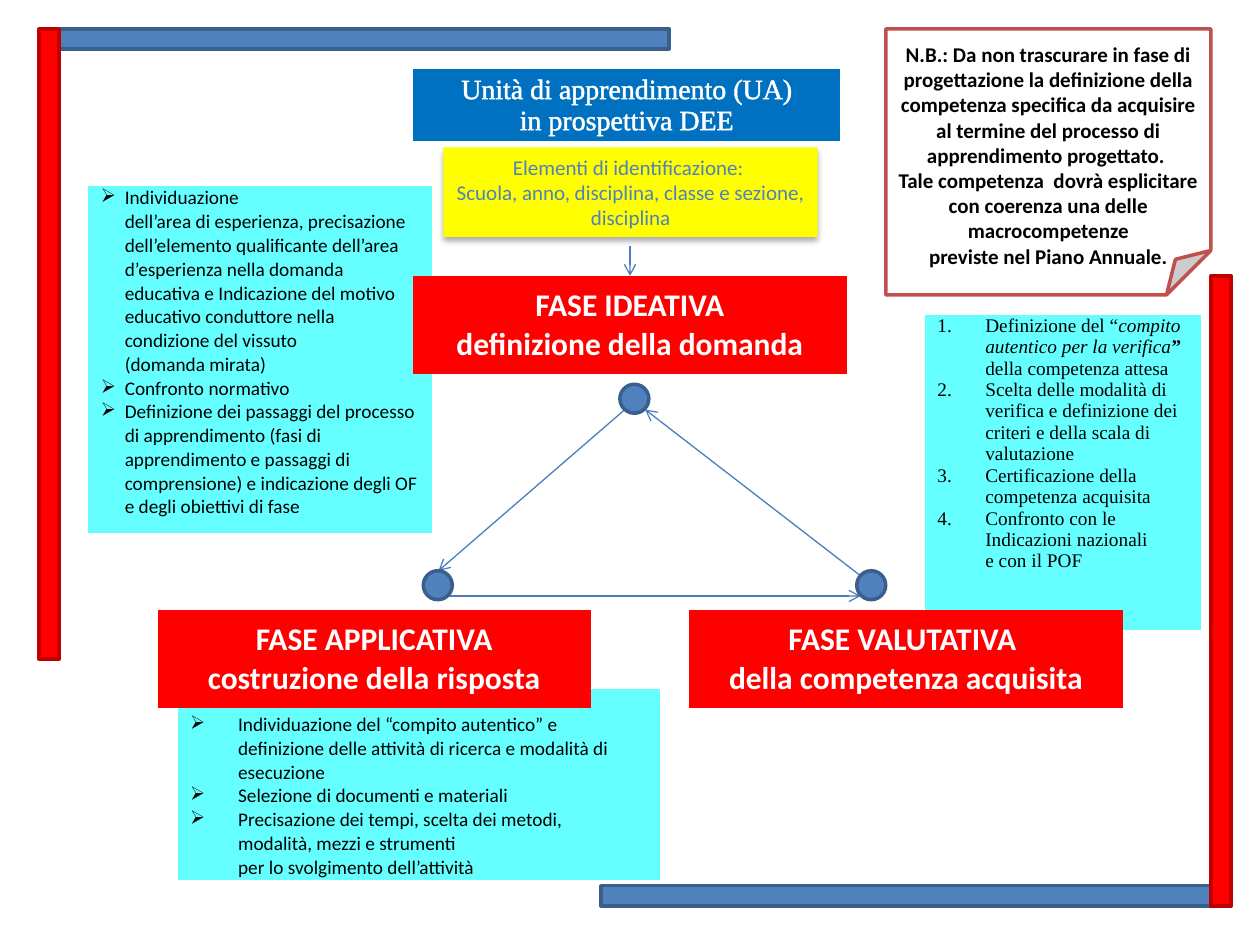
from lxml.etree import SubElement as Sub
from pptx import Presentation
from pptx.dml.color import RGBColor as Color
from pptx.enum.shapes import MSO_CONNECTOR as Link, MSO_SHAPE as Shape
from pptx.enum.text import MSO_ANCHOR as Anchor, PP_ALIGN as Align
from pptx.oxml.ns import qn
from pptx.util import Inches, Pt

WHITE = Color(0xFF, 0xFF, 0xFF)
BLACK = Color(0, 0, 0)
RED = Color(0xFF, 0, 0)
DARK_RED = Color(0xC0, 0, 0)
ROSE = Color(0xC0, 0x50, 0x4D)
BLUE = Color(0x4F, 0x81, 0xBD)
NAVY = Color(0x3A, 0x5F, 0x8C)
ARROW = Color(0x4B, 0x7E, 0xBC)
TITLE = Color(0, 0x70, 0xC0)
YELLOW = Color(0xFF, 0xFF, 0)
CYAN = Color(0x66, 0xFF, 0xFF)
SANS, SERIF = "Calibri", "Times New Roman"

AREA = [
    "Individuazione \ndell’area di esperienza, precisazione dell’elemento qualificante "
    "dell’area d’esperienza nella domanda educativa e Indicazione del motivo educativo "
    "conduttore nella condizione del vissuto\n(domanda mirata)",
    "Confronto normativo",
    "Definizione dei passaggi del processo di apprendimento (fasi di apprendimento e "
    "passaggi di comprensione) e indicazione degli OF e degli obiettivi di fase",
]
TASKS = [
    "Individuazione del “compito autentico” e definizione delle attività di ricerca "
    "e modalità di esecuzione",
    "Selezione di documenti e materiali",
    "Precisazione dei tempi, scelta dei metodi, \nmodalità, mezzi e strumenti \n"
    "per lo svolgimento dell’attività",
]
CHECKS = [
    "Definizione del “",
    "Scelta delle modalità di verifica e definizione dei criteri e della scala di valutazione",
    "Certificazione della competenza acquisita",
    "Confronto con le Indicazioni nazionali \ne con il POF",
]
NOTE = (
    "N.B.: Da non trascurare in fase di progettazione la definizione della competenza "
    "specifica da acquisire al termine del processo di apprendimento progettato. \n"
    "Tale competenza  dovrà esplicitare con coerenza una delle macrocompetenze\n"
    "previste nel Piano Annuale."
)
PHASES = [
    (3.28, 2.19, "FASE IDEATIVA\ndefinizione della domanda"),
    (5.47, 4.84, "FASE VALUTATIVA \ndella competenza acquisita"),
    (1.25, 4.84, "FASE APPLICATIVA\ncostruzione della risposta"),
]
DOTS = [(4.92, 3.05), (3.36, 4.53), (6.8, 4.53)]
ARROWS = [
    (5, 1.95, 5, 2.19),
    (4.96, 3.25, 3.48, 4.53),
    (3.56, 4.73, 6.83, 4.73),
    (6.83, 4.57, 5.12, 3.25),
]
BARS = [
    (0.31, 0.23, 5, 0.16, BLUE, NAVY),
    (4.77, 7.03, 5, 0.16, BLUE, NAVY),
    (0.31, 0.23, 0.16, 5, RED, DARK_RED),
    (9.61, 2.19, 0.16, 5, RED, DARK_RED),
]


def write(frame, items, size, color, font=SANS, bold=False, align=Align.CENTER):
    for i, item in enumerate(items):
        para = frame.add_paragraph() if i else frame.paragraphs[0]
        para.text = item
        para.alignment = align
        for run in para.runs:
            style(run, size, color, font, bold)


def style(run, size, color, font, bold=False, italic=False):
    run.font.size = Pt(size)
    run.font.name = font
    run.font.color.rgb = color
    run.font.bold = bold
    run.font.italic = italic


def add_cell(slide, left, top, width, height, fill, side=0.1):
    table = slide.shapes.add_table(
        1, 1, Inches(left), Inches(top), Inches(width), Inches(height)).table
    table.first_row = table.horz_banding = False
    cell = table.cell(0, 0)
    props = cell._tc.get_or_add_tcPr()
    for edge in "LRTB":
        Sub(Sub(props, qn(f"a:ln{edge}"), w="0"), qn("a:noFill"))
    cell.fill.solid()
    cell.fill.fore_color.rgb = fill
    cell.margin_left = cell.margin_right = Inches(side)
    cell.margin_top = cell.margin_bottom = 0
    return cell


def add_list(slide, box, items, indent, font=SANS, mark=None):
    cell = add_cell(slide, *box, CYAN)
    write(cell.text_frame, items, 11, BLACK, font, align=Align.LEFT)
    for para in cell.text_frame.paragraphs:
        props = para._p.get_or_add_pPr()
        props.set("marL", str(Inches(indent)))
        props.set("indent", str(-Inches(indent)))
        if mark:
            Sub(props, qn("a:buChar"), char=mark)
        else:
            Sub(props, qn("a:buAutoNum"), type="arabicPeriod")
    return cell


def add_band(slide, box, items, size, fill, font=SANS, bold=False, side=0.05):
    cell = add_cell(slide, *box, fill, side)
    cell.vertical_anchor = Anchor.MIDDLE
    write(cell.text_frame, items, size, WHITE, font, bold)
    return cell


def add_box(slide, kind, left, top, width, height, fill, line=None):
    box = slide.shapes.add_shape(
        kind, Inches(left), Inches(top), Inches(width), Inches(height))
    box.shadow.inherit = False
    box.fill.solid()
    box.fill.fore_color.rgb = fill
    if line is None:
        box.line.fill.background()
    else:
        box.line.color.rgb = line
        box.line.width = Pt(2)
    return box


def add_arrow(slide, *ends):
    arrow = slide.shapes.add_connector(Link.STRAIGHT, *map(Inches, ends))
    arrow.line.color.rgb = ARROW
    arrow.line.width = Pt(0.75)
    props = arrow.element.spPr
    Sub(props.find(qn("a:ln")), qn("a:tailEnd"), type="arrow")
    Sub(props, qn("a:effectLst"))


def add_glow(box):
    effects = box.element.spPr.find(qn("a:effectLst"))
    shade = Sub(effects, qn("a:outerShdw"), blurRad=str(Pt(3.5)),
                dist=str(Pt(2.2)), dir="5400000", rotWithShape="0")
    tint = Sub(shade, qn("a:srgbClr"), val="000000")
    Sub(tint, qn("a:alpha"), val="32000")


def add_outline(run):
    props = run._r.get_or_add_rPr()
    line = Sub(props, qn("a:ln"), w=str(Pt(1.45)))
    Sub(Sub(line, qn("a:solidFill")), qn("a:srgbClr"), val=str(WHITE))
    props.insert(0, line)


def add_note(slide):
    note = add_box(slide, Shape.FOLDED_CORNER, 7.03, 0.23, 2.58, 2.11, WHITE, ROSE)
    frame = note.text_frame
    frame.word_wrap = True
    frame.vertical_anchor = Anchor.TOP
    frame.margin_top, frame.margin_bottom = Inches(0.1), 0
    write(frame, [NOTE], 12, BLACK, bold=True)


def main():
    deck = Presentation()
    deck.slide_width, deck.slide_height = Inches(10), Inches(7.5)
    slide = deck.slides.add_slide(deck.slide_layouts[6])

    tasks = add_list(slide, (1.41, 5.47, 3.83, 1.51), TASKS, 0.38, mark="➢")
    tasks.margin_top = Inches(0.19)
    title = add_band(slide, (3.28, 0.55, 3.39, 0.57),
                     ["Unità di apprendimento (UA)", "in prospettiva DEE"],
                     16, TITLE, SERIF, side=0.07)
    for para in title.text_frame.paragraphs:
        add_outline(para.runs[0])

    ident = add_box(slide, Shape.RECTANGLE, 3.52, 1.17, 2.97, 0.71, YELLOW)
    add_glow(ident)
    ident.text_frame.word_wrap = True
    write(ident.text_frame,
          ["Elementi di identificazione: ",
           "Scuola, anno, disciplina, classe e sezione, disciplina"], 12, BLUE)

    for bar in BARS:
        add_box(slide, Shape.RECTANGLE, *bar)
    for ends in ARROWS:
        add_arrow(slide, *ends)
    for left, top in DOTS:
        add_box(slide, Shape.OVAL, left, top, 0.23, 0.23, BLUE, NAVY)

    add_list(slide, (0.7, 1.48, 2.73, 2.75), AREA, 0.19, mark="➢")
    checks = add_list(slide, (7.34, 2.5, 2.19, 2.5), CHECKS, 0.38, SERIF)
    first = checks.text_frame.paragraphs[0]
    for text, bold, italic in [("compito autentico per la verifica", False, True),
                               ("” ", True, False),
                               ("della competenza attesa", False, False)]:
        run = first.add_run()
        run.text = text
        style(run, 11, BLACK, SERIF, bold, italic)
    for left, top, text in PHASES:
        add_band(slide, (left, top, 3.44, 0.78), [text], 18, RED, bold=True)
    add_note(slide)
    deck.save("out.pptx")


if __name__ == "__main__":
    main()
